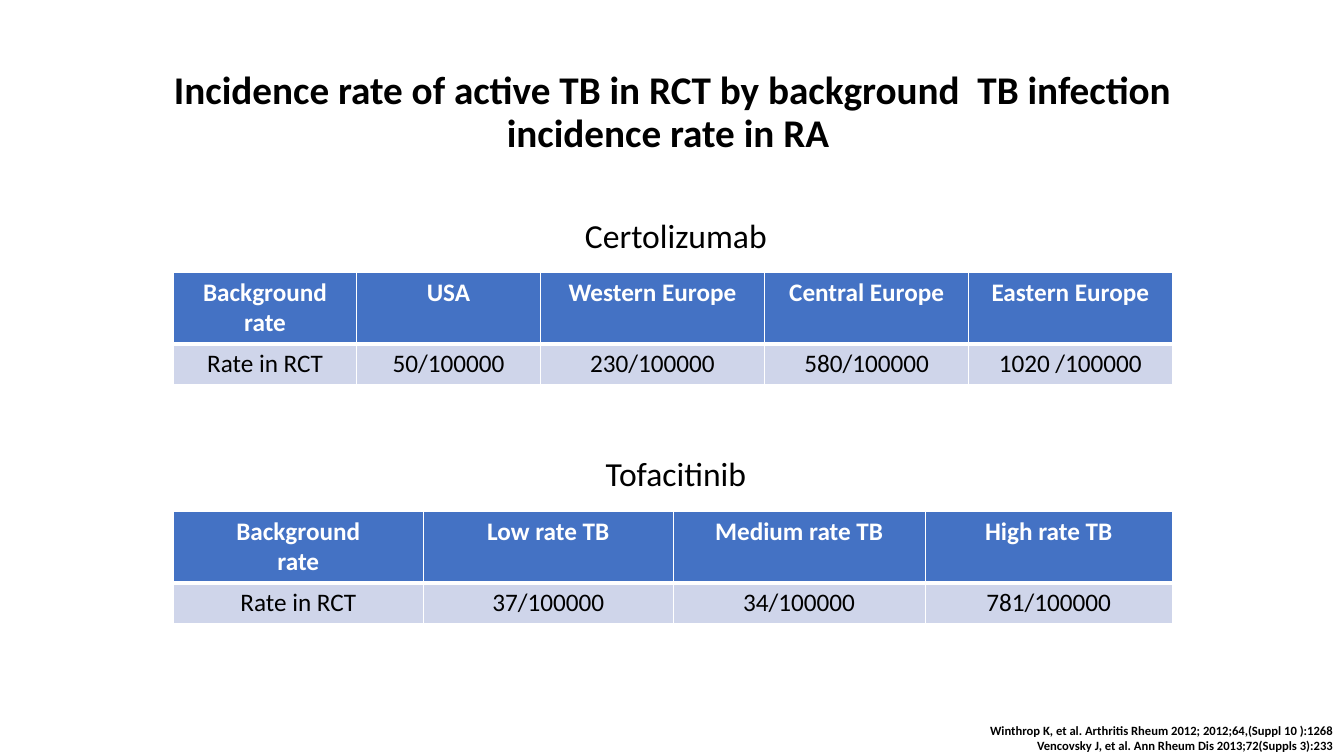
from dataclasses import dataclass

from lxml.etree import SubElement
from pptx import Presentation
from pptx.dml.color import RGBColor
from pptx.enum.text import MSO_ANCHOR, MSO_AUTO_SIZE, PP_ALIGN
from pptx.oxml.ns import qn
from pptx.util import Pt


@dataclass(frozen=True)
class Theme:
    font: str = "Calibri"
    black: str = "000000"
    white: str = "FFFFFF"
    header: str = "4472C4"
    body: str = "CFD5EA"
    title_size: float = 28
    caption_size: float = 24
    cell_size: float = 18
    source_size: float = 9


THEME = Theme()
TABLE_LEFT = 123.84
ROW_HEIGHTS = (50.4, 29.5)


def write_text(tf, text, size, color=THEME.black, bold=False,
               align=PP_ALIGN.CENTER, spacing=None):
    for i, line in enumerate(text.split("\n")):
        p = tf.add_paragraph() if i else tf.paragraphs[0]
        p.alignment = align
        p.line_spacing = spacing
        r = p.add_run()
        r.text = line
        r.font.name = THEME.font
        r.font.size = Pt(size)
        r.font.bold = bold
        r.font.color.rgb = RGBColor.from_string(color)


def add_text(s, box, text, size, anchor=MSO_ANCHOR.MIDDLE, grow=False, **fmt):
    tf = s.shapes.add_textbox(*map(Pt, box)).text_frame
    tf.word_wrap = True
    tf.vertical_anchor = anchor
    tf.auto_size = MSO_AUTO_SIZE.SHAPE_TO_FIT_TEXT if grow else MSO_AUTO_SIZE.NONE
    write_text(tf, text, size, **fmt)


def set_borders(cell, top, bottom):
    tc_pr = cell._tc.get_or_add_tcPr()
    for side, width in (("L", 1), ("R", 1), ("T", top), ("B", bottom)):
        ln = SubElement(tc_pr, qn(f"a:ln{side}"), w=str(Pt(width)))
        fill = SubElement(ln, qn("a:solidFill"))
        SubElement(fill, qn("a:srgbClr"), val=THEME.white)


def add_rate_table(s, top, widths, headers, rates):
    tbl = s.shapes.add_table(2, len(widths), Pt(TABLE_LEFT), Pt(top),
                             Pt(sum(widths)), Pt(sum(ROW_HEIGHTS))).table
    for column, width in zip(tbl.columns, widths):
        column.width = Pt(width)
    for row, height in zip(tbl.rows, ROW_HEIGHTS):
        row.height = Pt(height)
    styles = (
        (headers, THEME.header, THEME.white, True, 1, 3),
        (rates, THEME.body, THEME.black, False, 3, 1),
    )
    for row, (texts, fill, color, bold, upper, lower) in enumerate(styles):
        for col, text in enumerate(texts):
            cell = tbl.cell(row, col)
            set_borders(cell, upper, lower)
            cell.fill.solid()
            cell.fill.fore_color.rgb = RGBColor.from_string(fill)
            write_text(cell.text_frame, text, THEME.cell_size,
                       color=color, bold=bold)


def add_drug(s, name, caption_top, table_top, widths, headers, rates):
    add_text(s, (380.88, caption_top, 203.76, 33.84), name, THEME.caption_size)
    add_rate_table(s, table_top, widths, headers, rates)


def main():
    prs = Presentation()
    prs.slide_width, prs.slide_height = Pt(960), Pt(540)
    s = prs.slides.add_slide(prs.slide_layouts[6])

    add_text(s, (66.24, 28.8, 828, 104.4),
             "Incidence rate of active TB in RCT by background  TB infection "
             "incidence rate in RA ",
             THEME.title_size, bold=True, spacing=0.9)
    add_drug(s, "Certolizumab", 151.2, 194.4,
             (131, 131, 160.5, 145.5, 145.5),
             ("Background rate", "USA", "Western Europe", "Central Europe",
              "Eastern Europe"),
             ("Rate in RCT", "50/100000", "230/100000", "580/100000",
              "1020 /100000"))
    add_drug(s, "Tofacitinib", 321.12, 365.04,
             (178.5, 178.5, 180, 176.5),
             ("Background\nrate", "Low rate TB", "Medium rate TB",
              "High rate TB"),
             ("Rate in RCT", "37/100000", "34/100000", "781/100000"))
    add_text(s, (599.04, 512.64, 360, 28.8),
             "Winthrop K, et al. Arthritis Rheum 2012; 2012;64,(Suppl 10 ):1268\n"
             "Vencovsky J, et al. Ann Rheum Dis 2013;72(Suppls 3):233",
             THEME.source_size, anchor=MSO_ANCHOR.TOP, grow=True,
             bold=True, align=PP_ALIGN.RIGHT)

    prs.save("out.pptx")


if __name__ == "__main__":
    main()
